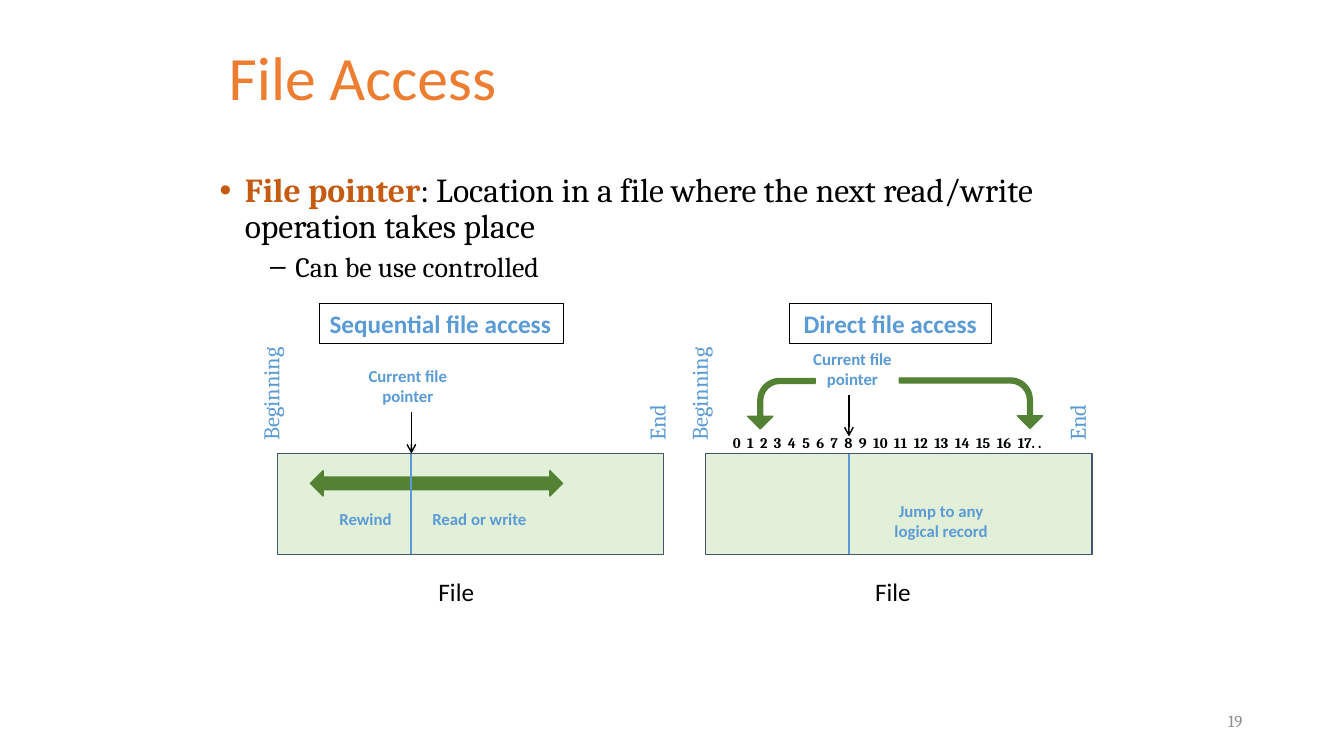
from lxml import etree
from pptx import Presentation
from pptx.dml.color import RGBColor
from pptx.enum.shapes import MSO_CONNECTOR, MSO_SHAPE
from pptx.enum.text import MSO_ANCHOR, PP_ALIGN
from pptx.oxml.ns import qn
from pptx.util import Inches, Pt

LEFT, CENTER, RIGHT = PP_ALIGN.LEFT, PP_ALIGN.CENTER, PP_ALIGN.RIGHT
TOP, MIDDLE = MSO_ANCHOR.TOP, MSO_ANCHOR.MIDDLE
RECTANGLE, STRAIGHT = MSO_SHAPE.RECTANGLE, MSO_CONNECTOR.STRAIGHT
RIGHT_ARROW, BENT_ARROW = MSO_SHAPE.RIGHT_ARROW, MSO_SHAPE.BENT_ARROW

COLORS = {
    "orange": "ED7D31", "rust": "C55A11", "black": "000000", "gray": "8C8C8C",
    "blue": "5B9BD5", "pale green": "E2F0D9", "green": "548235", "slate": "44546A",
}

# Text formats
FORMATS = {
    "title": {"name": "Calibri", "size": 44, "color": "orange"},
    "term": {"name": "Cambria", "size": 24, "color": "rust", "bold": True},
    "body": {"name": "Cambria", "size": 24, "color": "black"},
    "detail": {"name": "Cambria", "size": 20, "color": "black"},
    "number": {"name": "Cambria", "size": 12, "color": "gray"},
    "heading": {"name": "Calibri", "size": 18, "color": "blue", "bold": True},
    "edge": {"name": "Cambria", "size": 16, "color": "blue"},
    "label": {"name": "Calibri", "size": 12, "color": "blue", "bold": True},
    "caption": {"name": "Calibri", "size": 18, "color": "black"},
    "records": {"name": "Cambria", "size": 10.5, "color": "black", "bold": True},
}

# Content: runs, bullet, indent level, space before
BULLETS = [
    ([("File pointer", "term"),
      (": Location in a file where the next read/write operation takes place", "body")],
     "•", 0, 10),
    ([("Can be use controlled", "detail")], "–", 1, 5),
]
RECORDS = "  ".join(str(number) for number in range(18)) + ". ."
POINTER = ["Current file", "pointer"]

FILE_TOP, FILE_WIDTH, FILE_HEIGHT = 4.5, 3.83, 1
# Each diagram: file left, pointer x, pointer arrow span, headings and labels
DIAGRAMS = [
    {"left": 2.75, "pointer": 4.08, "arrow": (4.09, 4.5),
     "heading": ("Sequential file access", (3.17, 3.01, 2.42, 0.4), LEFT),
     "edges": [("Beginning", 2.5), ("End", 6.33)], "caption": 4.25,
     "labels": [(POINTER, (3.42, 3.58, 1.25, 0.5)),
                (["Rewind"], (3.25, 5, 0.75, 0.3)),
                (["Read or write"], (4.17, 5, 1.17, 0.3))]},
    {"left": 7, "pointer": 8.42, "arrow": (3.92, 4.33),
     "heading": ("Direct file access", (7.83, 3.01, 2, 0.4), CENTER),
     "edges": [("Beginning", 6.75), ("End", 10.5)], "caption": 8.58,
     "labels": [(POINTER, (7.83, 3.41, 1.25, 0.5)),
                (["Jump to any logical record"], (8.67, 4.92, 1.33, 0.5))]},
]
# Block arrows: kind, box, rotation, flipped
BLOCK_ARROWS = [
    (RIGHT_ARROW, (4.08, 4.67, 1.5, 0.25), 0, False),
    (RIGHT_ARROW, (3.08, 4.67, 1, 0.25), 0, True),
    (BENT_ARROW, (9.38, 3.29, 0.5, 1.42), 90, False),
    (BENT_ARROW, (7.5, 3.67, 0.5, 0.67), 270, True),
]
BEND = (0.097, 0.25, 0.25, 0.438)

presentation = Presentation()
presentation.slide_width, presentation.slide_height = Inches(13.33), Inches(7.5)
slide = presentation.slides.add_slide(presentation.slide_layouts[6])


def rgb(color):
    return RGBColor.from_string(COLORS[color])


def add_run(paragraph, text, style):
    run = paragraph.add_run()
    run.text = text
    for key, value in FORMATS[style].items():
        if key == "color":
            run.font.color.rgb = rgb(value)
        else:
            setattr(run.font, key, Pt(value) if key == "size" else value)


def write(shape, lines, style, align=LEFT, anchor=TOP):
    frame = shape.text_frame
    frame.word_wrap, frame.vertical_anchor = True, anchor
    for index, line in enumerate(lines):
        paragraph = frame.add_paragraph() if index else frame.paragraphs[0]
        paragraph.alignment = align
        add_run(paragraph, line, style)
    return frame


def add_text(box, lines, style, align=LEFT, anchor=TOP):
    shape = slide.shapes.add_textbox(*map(Inches, box))
    return write(shape, lines, style, align, anchor)


def add_block(kind, box, line, width, fill=None):
    shape = slide.shapes.add_shape(kind, *map(Inches, box))
    shape.shadow.inherit = False
    if fill:
        shape.fill.solid()
        shape.fill.fore_color.rgb = rgb(fill)
    else:
        shape.fill.background()
    shape.line.color.rgb, shape.line.width = rgb(line), Pt(width)
    return shape


def add_vertical(x, top, bottom, color, width, arrow=False):
    ends = map(Inches, (x, top, x, bottom))
    connector = slide.shapes.add_connector(STRAIGHT, *ends)
    connector.line.color.rgb, connector.line.width = rgb(color), Pt(width)
    if arrow:
        line = connector.line._get_or_add_ln()
        etree.SubElement(line, qn("a:tailEnd")).set("type", "arrow")
    etree.SubElement(connector._element.spPr, qn("a:effectLst"))


# Title and slide number
title = add_text((2.17, 0.17, 9, 1.25), ["File Access"], "title", anchor=MIDDLE)
title.paragraphs[0].line_spacing = 0.9
add_text((9.42, 6.95, 3, 0.4), ["19"], "number", RIGHT, MIDDLE)

# Bullets
body = add_text((2.08, 1.67, 9.08, 5.58), [], "body")
for index, (runs, bullet, level, space) in enumerate(BULLETS):
    paragraph = body.add_paragraph() if index else body.paragraphs[0]
    paragraph.level, paragraph.line_spacing = level, 0.9
    paragraph.space_before = Pt(space)
    for text, style in runs:
        add_run(paragraph, text, style)
    properties = paragraph._p.get_or_add_pPr()
    properties.set("marL", str(Inches(0.25 + 0.5 * level)))
    properties.set("indent", str(Inches(-0.25)))
    color = etree.SubElement(properties, qn("a:buClr"))
    bullet_color = COLORS[FORMATS[runs[0][1]]["color"]]
    etree.SubElement(color, qn("a:srgbClr")).set("val", bullet_color)
    etree.SubElement(properties, qn("a:buFont")).set("typeface", "Arial")
    etree.SubElement(properties, qn("a:buChar")).set("char", bullet)

# Files with their headings
for diagram in DIAGRAMS:
    heading, box, align = diagram["heading"]
    write(add_block(RECTANGLE, box, "black", 0.75), [heading], "heading", align)
    file_box = (diagram["left"], FILE_TOP, FILE_WIDTH, FILE_HEIGHT)
    add_block(RECTANGLE, file_box, "slate", 1, "pale green")

# Block arrows
for kind, box, rotation, flipped in BLOCK_ARROWS:
    arrow = add_block(kind, box, "green", 1, "green")
    arrow.rotation = rotation
    if flipped:
        arrow._element.spPr.xfrm.set("flipH", "1")
    if kind == BENT_ARROW:
        for index, value in enumerate(BEND):
            arrow.adjustments[index] = value

# Pointers and labels
for diagram in DIAGRAMS:
    add_vertical(diagram["pointer"], FILE_TOP, FILE_TOP + FILE_HEIGHT, "blue", 1.5)
    add_vertical(diagram["pointer"], *diagram["arrow"], "black", 1, arrow=True)
    for text, left in diagram["edges"]:
        frame = add_text((left, 3.33, 0.47, 1.14), [text], "edge")
        frame._txBody.bodyPr.set("vert", "vert270")
    for lines, box in diagram["labels"]:
        add_text(box, lines, "label", CENTER)
    add_text((diagram["caption"], 5.67, 0.58, 0.4), ["File"], "caption")
add_text((7.17, 4.25, 3.42, 0.28), [RECORDS], "records")

presentation.save("out.pptx")
